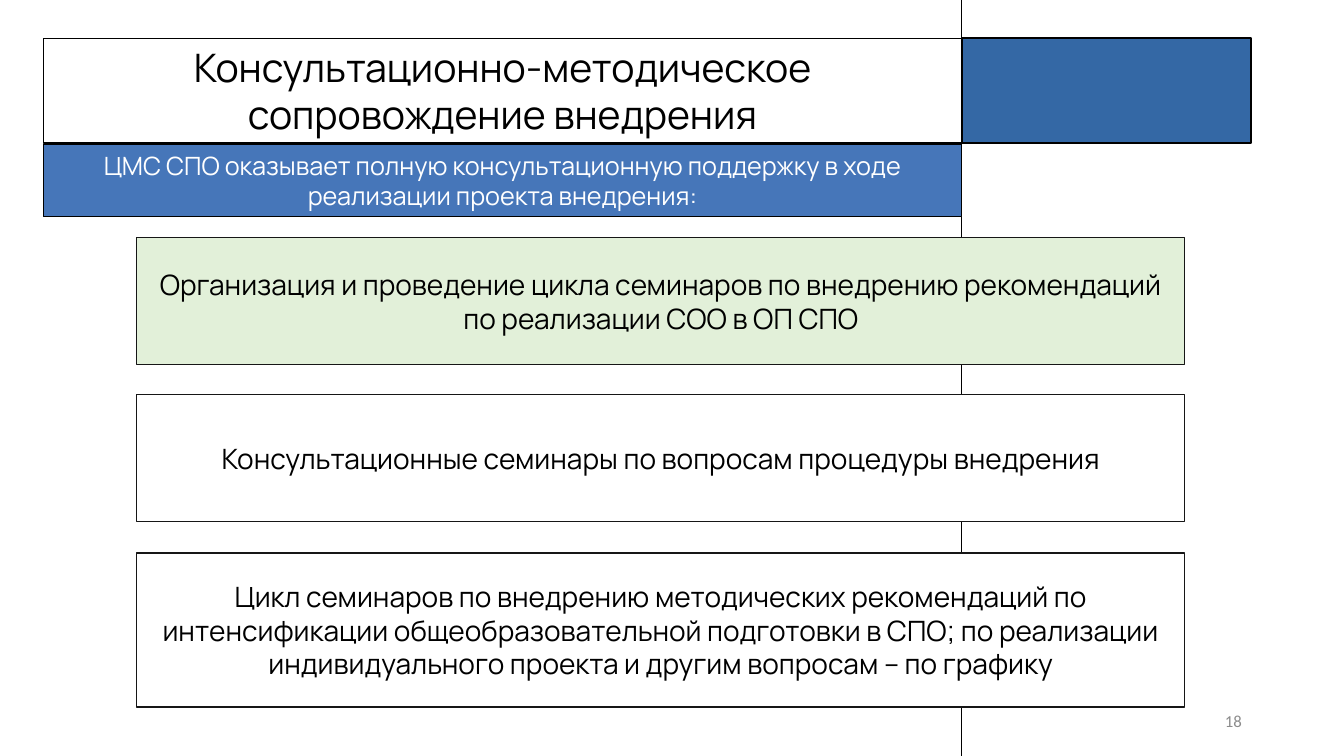
import pptx
import pptx.dml.color
import pptx.enum.shapes
import pptx.enum.text
import pptx.util
import lxml.etree

SCALE = 12192000 / 1344
ANCHOR = pptx.enum.text.MSO_ANCHOR
ALIGN = pptx.enum.text.PP_ALIGN
RECTANGLE = pptx.enum.shapes.MSO_SHAPE.RECTANGLE


def place(*lengths):
    return [pptx.util.Emu(round(length * SCALE)) for length in lengths]


def color(hex_string):
    return pptx.dml.color.RGBColor.from_string(hex_string)


presentation = pptx.Presentation()
presentation.slide_width, presentation.slide_height = place(1344, 756)
slide = presentation.slides.add_slide(presentation.slide_layouts[5])

divider = slide.shapes.add_connector(
    pptx.enum.shapes.MSO_CONNECTOR.STRAIGHT, *place(962, 0, 962, 756))
divider.line.color.rgb = color("000000")
divider.line.width = pptx.util.Pt(0.75)
lxml.etree.SubElement(divider.element.spPr, pptx.oxml.ns.qn("a:effectLst"))

title = slide.shapes.title
title.left, title.top, title.width, title.height = place(43, 38, 919, 105)
page_number = slide.shapes.add_textbox(*place(950, 701, 302, 40))
accent = slide.shapes.add_shape(RECTANGLE, *place(962, 38, 289, 105))
banner = slide.shapes.add_shape(RECTANGLE, *place(43, 145, 919, 72))

boxes = [
    (title, None, "000000", 0.75),
    (accent, "3468A5", "000000", 1),
    (banner, "4676B9", "000000", 0.75),
]
texts = [
    (title, "Консультационно-методическое сопровождение внедрения",
     "Manrope", 28, "000000", ALIGN.CENTER, ANCHOR.TOP, 5),
    (banner, "ЦМС СПО оказывает полную консультационную поддержку в ходе реализации проекта внедрения:",
     "Manrope", 18, "FFFFFF", ALIGN.CENTER, ANCHOR.TOP, 5),
    (page_number, "18", "Calibri", 12, "8C8C8C", ALIGN.RIGHT, ANCHOR.MIDDLE, 5),
]

cards = [
    (238, 127, "E2F0D9", "Организация и проведение цикла семинаров по внедрению рекомендаций по реализации СОО в ОП СПО"),
    (395, 127, "FFFFFF", "Консультационные семинары по вопросам процедуры внедрения"),
    (553, 154, "FFFFFF", "Цикл семинаров по внедрению методических рекомендаций по интенсификации общеобразовательной "
     "подготовки в СПО; по реализации индивидуального проекта и другим вопросам – по графику"),
]
for top, height, fill, text in cards:
    card = slide.shapes.add_shape(RECTANGLE, *place(137, top, 1048, height))
    boxes.append((card, fill, "161616", 0.75))
    texts.append((card, text, "Manrope", 20, "000000", ALIGN.CENTER, ANCHOR.MIDDLE, 10))

for shape, fill, outline, width in boxes:
    shape.shadow.inherit = False
    if fill:
        shape.fill.solid()
        shape.fill.fore_color.rgb = color(fill)
    else:
        shape.fill.background()
    shape.line.color.rgb = color(outline)
    shape.line.width = pptx.util.Pt(width)

for shape, text, font_name, size, text_color, alignment, anchor, inset in texts:
    frame = shape.text_frame
    frame.text = text
    frame.word_wrap = True
    frame.auto_size = pptx.enum.text.MSO_AUTO_SIZE.NONE
    frame.vertical_anchor = anchor
    frame.margin_left = frame.margin_right = place(10)[0]
    frame.margin_top = frame.margin_bottom = place(inset)[0]
    paragraph = frame.paragraphs[0]
    paragraph.alignment = alignment
    font = paragraph.runs[0].font
    font.name = font_name
    font.size = pptx.util.Pt(size)
    font.color.rgb = color(text_color)

presentation.save("out.pptx")
